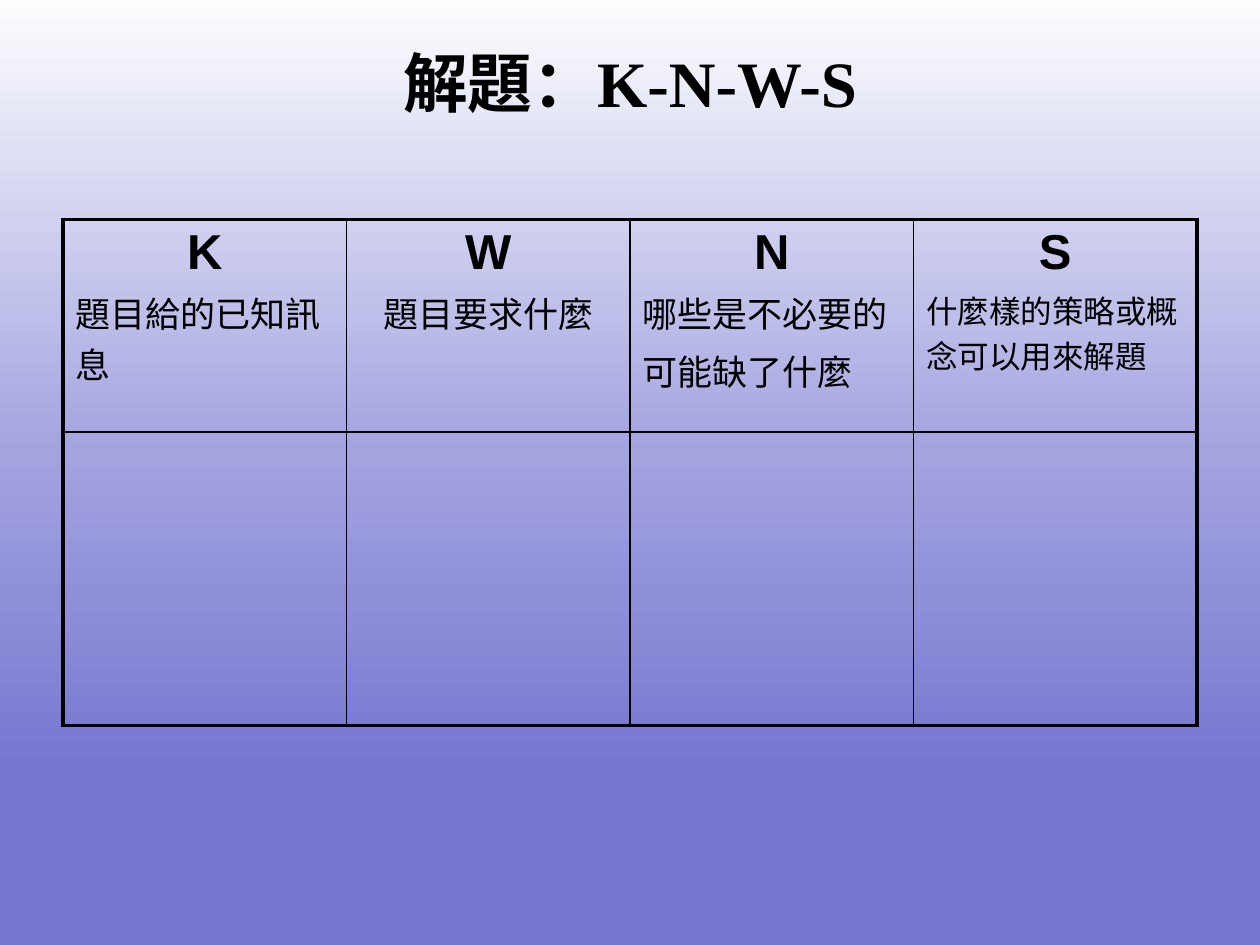
import copy

import pptx
import pptx.dml.color
import pptx.enum.text
import pptx.oxml.ns
import pptx.util
from lxml import etree

Cm = pptx.util.Cm
Pt = pptx.util.Pt
RGBColor = pptx.dml.color.RGBColor
ALIGN = pptx.enum.text.PP_ALIGN
qn = pptx.oxml.ns.qn

BLACK = RGBColor(0x00, 0x00, 0x00)
MIST = RGBColor(0xFC, 0xFD, 0xFE)
LAVENDER = RGBColor(0xA3, 0xA3, 0xE0)
VIOLET = RGBColor(0x75, 0x75, 0xD1)
BACKGROUND_STOPS = [(0, MIST), (0.48, LAVENDER), (0.83, VIOLET), (1, VIOLET)]

THIN, THICK = 1, 2.25
COLUMNS = [
    ("K", ["題目給的已知訊息"], 20, ALIGN.LEFT),
    ("W", ["題目要求什麼"], 20, ALIGN.CENTER),
    ("N", ["哪些是不必要的", "可能缺了什麼"], 20, ALIGN.LEFT),
    ("S", ["什麼樣的策略或概念可以用來解題"], 18, ALIGN.LEFT),
]
ROW_HEIGHTS = [4.29, 5.92]


class SlideBuilder:
    title_font = "Times New Roman"
    table_font = "Arial"

    def __init__(self, deck):
        self.page = deck.slides.add_slide(deck.slide_layouts[5])

    def background(self, stops):
        fill = self.page.background.fill
        fill.gradient()
        fill.gradient_angle = 270
        stop_list = self.page.element.find(".//" + qn("a:gsLst"))
        first = stop_list[0]
        for extra in stop_list[1:]:
            stop_list.remove(extra)
        for _ in stops[1:]:
            stop_list.append(copy.deepcopy(first))
        for stop, (position, color) in zip(fill.gradient_stops, stops):
            stop.position = position
            stop.color.rgb = color

    def span(self, para, text, font, size, bold):
        span = para.add_run()
        span.text = text
        span.font.name = font
        span.font.size = Pt(size)
        span.font.bold = bold
        span.font.color.rgb = BLACK

    def title(self, text, left, top, width, height):
        box = self.page.shapes.title
        box.left, box.top, box.width, box.height = map(Cm, (left, top, width, height))
        box.text_frame.auto_size = pptx.enum.text.MSO_AUTO_SIZE.SHAPE_TO_FIT_TEXT
        para = box.text_frame.paragraphs[0]
        para.alignment = ALIGN.CENTER
        self.span(para, text, self.title_font, 37, True)

    def borders(self, cell, widths):
        properties = cell._tc.get_or_add_tcPr()
        for side, width in zip("LRTB", widths):
            line = etree.SubElement(properties, qn("a:ln" + side), w=str(Pt(width)))
            solid = etree.SubElement(line, qn("a:solidFill"))
            etree.SubElement(solid, qn("a:srgbClr"), val=str(BLACK))

    def heading_cell(self, cell, letter, lines, size, alignment):
        para = cell.text_frame.paragraphs[0]
        para.alignment = ALIGN.CENTER
        self.span(para, letter, self.table_font, 28, True)
        for line in lines:
            para = cell.text_frame.add_paragraph()
            para.alignment = alignment
            para.space_before = Pt(size * 0.2)
            self.span(para, line, self.table_font, size, False)

    def table(self, columns, row_heights, left, top, width):
        rows, count = len(row_heights), len(columns)
        frame = self.page.shapes.add_table(
            rows, count, Cm(left), Cm(top), Cm(width), Cm(sum(row_heights)))
        table = frame.table
        table.first_row = table.horz_banding = False
        for row, height in zip(table.rows, row_heights):
            row.height = Cm(height)
        for r in range(rows):
            for c in range(count):
                cell = table.cell(r, c)
                outer = (c == 0, c == count - 1, r == 0, r == rows - 1)
                self.borders(cell, [THICK if edge else THIN for edge in outer])
                cell.fill.background()
        for c, column in enumerate(columns):
            self.heading_cell(table.cell(0, c), *column)


def main():
    deck = pptx.Presentation()
    deck.slide_width, deck.slide_height = Cm(25.4), Cm(19.05)
    builder = SlideBuilder(deck)
    builder.background(BACKGROUND_STOPS)
    builder.title("解題：K-N-W-S", 3.28, 0.74, 18.84, 1.83)
    builder.table(COLUMNS, ROW_HEIGHTS, 1.27, 4.42, 22.86)
    deck.save("out.pptx")


if __name__ == "__main__":
    main()
